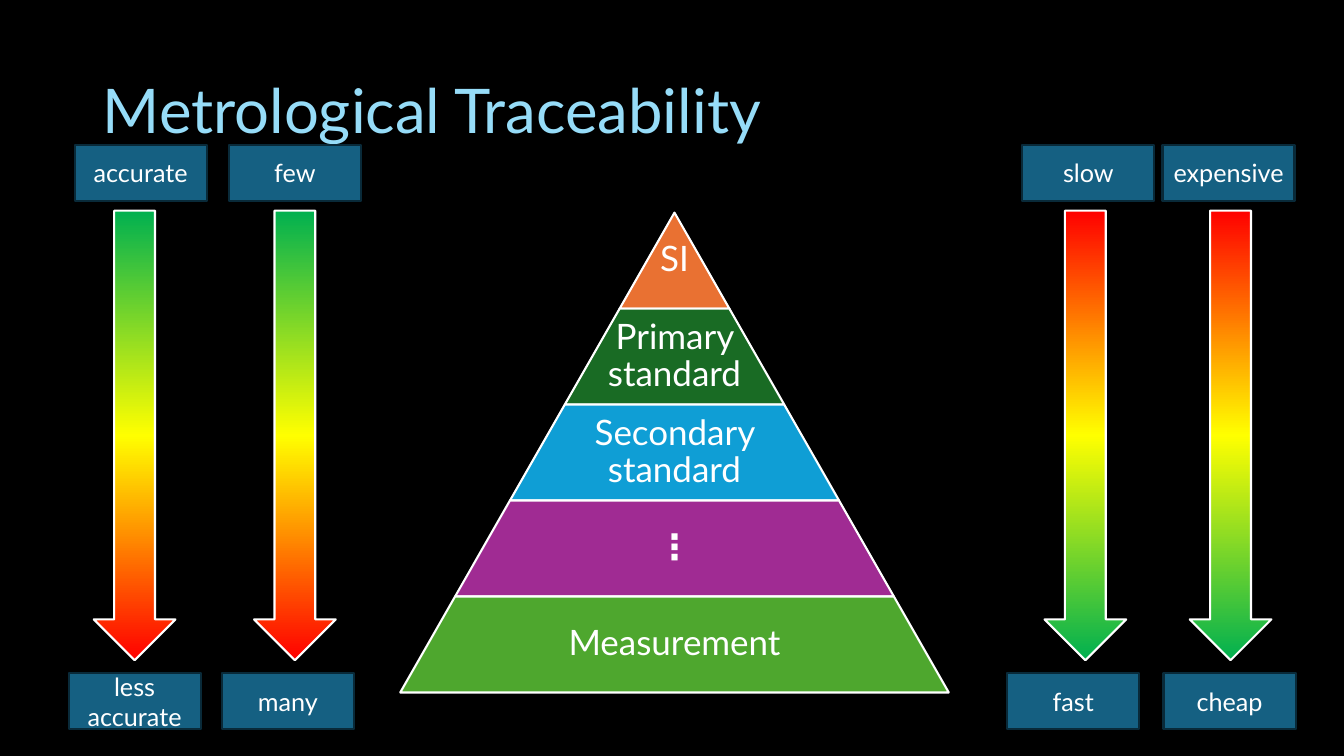
from copy import deepcopy

from lxml.etree import SubElement
from pptx import Presentation
from pptx.dml.color import RGBColor
from pptx.enum.shapes import MSO_SHAPE
from pptx.enum.text import MSO_ANCHOR, MSO_AUTO_SIZE, PP_ALIGN
from pptx.oxml.ns import qn
from pptx.util import Inches, Pt

FONT = "Lato"
COLORS = {
    "background": "000000",
    "title": "96DCF8",
    "white": "FFFFFF",
    "label": "156082",
    "label_edge": "092A39",
    "red": "FF0000",
    "yellow": "FFFF00",
    "green": "00B050",
    "si": "E97132",
    "primary": "196B24",
    "secondary": "0F9ED5",
    "further": "A02B93",
    "measurement": "4EA72E",
}
LEVELS = [
    ("SI", "si"),
    ("Primary standard", "primary"),
    ("Secondary standard", "secondary"),
    ("⋮", "further"),
    ("Measurement", "measurement"),
]
RED_AT_TOP, RED_AT_BOTTOM = 270, 90
SCALES = [
    (0.93, RED_AT_BOTTOM, ("accurate", 0.74), ("less accurate", 0.68)),
    (2.52, RED_AT_BOTTOM, ("few", 2.27), ("many", 2.2)),
    (10.36, RED_AT_TOP, ("slow", 10.14), ("fast", 9.99)),
    (11.8, RED_AT_TOP, ("expensive", 11.53), ("cheap", 11.54)),
]


def rgb(name):
    """Return the named colour."""
    return RGBColor.from_string(COLORS[name])


def write(holder, wording, size, color="white", align=PP_ALIGN.CENTER, spacing=None, bold=None):
    """Set and format the wording of a shape, text box or placeholder."""
    frame = holder.text_frame
    frame.word_wrap = True
    frame.auto_size = MSO_AUTO_SIZE.NONE
    frame.vertical_anchor = MSO_ANCHOR.MIDDLE
    frame.text = wording
    paragraph = frame.paragraphs[0]
    paragraph.alignment = align
    paragraph.line_spacing = spacing
    font = paragraph.runs[0].font
    font.name, font.size, font.bold = FONT, Pt(size), bold
    font.color.rgb = rgb(color)


def add_outlined(slide, preset, box, edge="white"):
    """Add a preset shape with a thin outline and no shadow."""
    shape = slide.shapes.add_shape(preset, *map(Inches, box))
    shape.shadow.inherit = False
    shape.line.color.rgb = rgb(edge)
    shape.line.width = Pt(1.5)
    return shape


def fill_solid(shape, color):
    """Fill a shape with one named colour."""
    shape.fill.solid()
    shape.fill.fore_color.rgb = rgb(color)


def add_title(slide, box):
    """Place and format the slide title."""
    title = slide.shapes.title
    title.left, title.top, title.width, title.height = map(Inches, box)
    write(title, "Metrological Traceability", 44, "title", PP_ALIGN.LEFT, 0.9)


def add_pyramid(slide, box):
    """Stack the levels of the traceability pyramid from apex to base."""
    left, top, width, height = box
    level_height = height / len(LEVELS)
    for index, (wording, color) in enumerate(LEVELS):
        level_width = width * (index + 1) / len(LEVELS)
        level_left = left + (width - level_width) / 2
        level_top = top + index * level_height
        level = add_outlined(slide, MSO_SHAPE.TRAPEZOID,
                             (level_left, level_top, level_width, level_height))
        level.adjustments[0] = width / 2 / height
        fill_solid(level, color)

        caption_width = level_width * (0.65 if index else 1)
        caption_left = left + (width - caption_width) / 2
        caption = slide.shapes.add_textbox(
            *map(Inches, (caption_left, level_top, caption_width, level_height)))
        frame = caption.text_frame
        frame.margin_left = frame.margin_right = Inches(0.03)
        frame.margin_top = frame.margin_bottom = Inches(0.03)
        write(caption, wording, 25, spacing=0.9, bold=wording == "⋮" or None)


def add_arrow(slide, box, angle):
    """Add a down arrow shaded through red, yellow and green."""
    arrow = add_outlined(slide, MSO_SHAPE.DOWN_ARROW, box)
    arrow.fill.gradient()
    stop_list = arrow._element.spPr.find(".//" + qn("a:gsLst"))
    stop_list.insert(1, deepcopy(stop_list[0]))
    for index, color in enumerate(("red", "yellow", "green")):
        stop = arrow.fill.gradient_stops[index]
        stop.position = index / 2
        for child in list(stop_list[index]):
            stop_list[index].remove(child)
        SubElement(stop_list[index], qn("a:srgbClr"), val=COLORS[color])
    arrow.fill.gradient_angle = angle


def add_label(slide, box, wording):
    """Add a boxed label for one end of a scale."""
    label = add_outlined(slide, MSO_SHAPE.RECTANGLE, box, "label_edge")
    fill_solid(label, "label")
    write(label, wording, 18)


def add_scales(slide, top, height):
    """Add the arrows with a label above and below each."""
    label_width, label_height = 1.31, 0.55
    for arrow_left, angle, upper, lower in SCALES:
        add_arrow(slide, (arrow_left, top + 0.65, 0.81, height - 1.33), angle)
        for (wording, left), label_top in ((upper, top), (lower, top + height - label_height)):
            add_label(slide, (left, label_top, label_width, label_height), wording)


def main():
    """Build and save the slide."""
    deck = Presentation()
    deck.slide_width, deck.slide_height = Inches(13.33), Inches(7.5)
    slide = deck.slides.add_slide(deck.slide_layouts.get_by_name("Title Only"))
    slide.background.fill.solid()
    slide.background.fill.fore_color.rgb = rgb("background")
    add_title(slide, (0.92, 0.4, 11.5, 1.45))
    add_pyramid(slide, (3.97, 2.11, 5.44, 4.76))
    add_scales(slide, 1.44, 5.79)
    deck.save("out.pptx")


if __name__ == "__main__":
    main()
